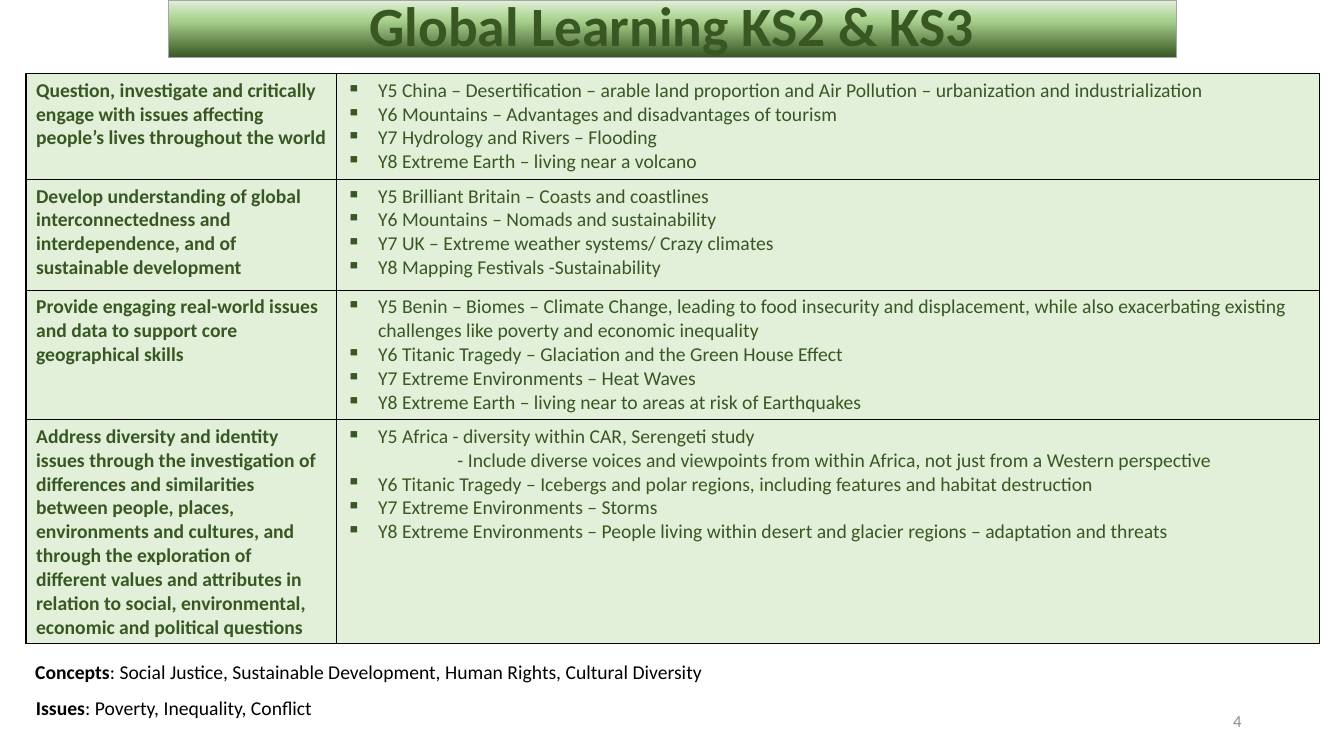
import copy

import lxml.etree
import pptx
import pptx.dml.color
import pptx.enum.shapes
import pptx.enum.text
import pptx.oxml.ns
import pptx.util

COLUMNS, ROWS = 160, 90
SLIDE_WIDTH = pptx.util.Inches(13.33)
SLIDE_HEIGHT = pptx.util.Inches(7.5)

RGBColor = pptx.dml.color.RGBColor
DARK_GREEN = RGBColor(0x38, 0x57, 0x23)
MID_GREEN = RGBColor(0xA9, 0xD1, 0x8E)
PALE_GREEN = RGBColor(0xE2, 0xF0, 0xD9)
BANNER_EDGE = RGBColor(0xA5, 0xA5, 0xA5)
NUMBER_GREY = RGBColor(0x8C, 0x8C, 0x8C)
BLACK = RGBColor(0, 0, 0)

ALIGN = pptx.enum.text.PP_ALIGN
MIDDLE = pptx.enum.text.MSO_ANCHOR.MIDDLE
BULLET_INDENT = 3.75
NOTE_INDENT = 13.2

AIMS = [
    ("Question, investigate and critically engage with issues affecting people’s lives throughout the world", 12.6, [
        "Y5 China – Desertification – arable land proportion and Air Pollution – urbanization and industrialization",
        "Y6 Mountains – Advantages and disadvantages of tourism",
        "Y7 Hydrology and Rivers – Flooding",
        "Y8 Extreme Earth – living near a volcano",
    ]),
    ("Develop understanding of global interconnectedness and interdependence, and of sustainable development", 13.2, [
        "Y5 Brilliant Britain – Coasts and coastlines",
        "Y6 Mountains – Nomads and sustainability",
        "Y7 UK – Extreme weather systems/ Crazy climates",
        "Y8 Mapping Festivals -Sustainability",
    ]),
    ("Provide engaging real-world issues and data to support core geographical skills", 15.4, [
        "Y5 Benin – Biomes – Climate Change, leading to food insecurity and displacement, while also "
        "exacerbating existing challenges like poverty and economic inequality",
        "Y6 Titanic Tragedy – Glaciation and the Green House Effect",
        "Y7 Extreme Environments – Heat Waves",
        "Y8 Extreme Earth – living near to areas at risk of Earthquakes",
    ]),
    ("Address diversity and identity issues through the investigation of differences and similarities "
     "between people, places, environments and cultures, and through the exploration of different values "
     "and attributes in relation to social, environmental, economic and political questions", 26.7, [
        "Y5 Africa - diversity within CAR, Serengeti study",
        "- Include diverse voices and viewpoints from within Africa, not just from a Western perspective",
        "Y6 Titanic Tragedy – Icebergs and polar regions, including features and habitat destruction",
        "Y7 Extreme Environments – Storms",
        "Y8 Extreme Environments – People living within desert and glacier regions – adaptation and threats",
    ]),
]


def across(columns):
    return round(SLIDE_WIDTH * columns / COLUMNS)


def down(rows):
    return round(SLIDE_HEIGHT * rows / ROWS)


def place(box):
    left, top, width, height = box
    return across(left), down(top), across(width), down(height)


def add_span(para, text, size, colour, bold=False):
    span = para.add_run()
    span.text = text
    span.font.name = "Calibri"
    span.font.size = pptx.util.Pt(size)
    span.font.bold = bold
    span.font.color.rgb = colour


def indent(para, margin, bullet):
    properties = para._p.get_or_add_pPr()
    properties.set("marL", str(across(margin)))
    if bullet:
        properties.set("indent", str(-across(margin)))
        mark = lxml.etree.SubElement(properties, pptx.oxml.ns.qn("a:buChar"))
        mark.set("char", "▪")


def style_cell(cell):
    cell.fill.solid()
    cell.fill.fore_color.rgb = PALE_GREEN
    properties = cell._tc.get_or_add_tcPr()
    for position, side in enumerate(("a:lnL", "a:lnR", "a:lnT", "a:lnB")):
        edge = lxml.etree.Element(pptx.oxml.ns.qn(side), w=str(pptx.util.Pt(1)))
        paint = lxml.etree.SubElement(edge, pptx.oxml.ns.qn("a:solidFill"))
        lxml.etree.SubElement(paint, pptx.oxml.ns.qn("a:srgbClr"), val=str(BLACK))
        properties.insert(position, edge)


def add_banner(page, box, title):
    banner = page.shapes.add_shape(pptx.enum.shapes.MSO_SHAPE.RECTANGLE, *place(box))
    banner.shadow.inherit = False
    banner.line.color.rgb = BANNER_EDGE
    banner.line.width = pptx.util.Pt(0.5)
    banner.fill.gradient()
    banner.fill.gradient_angle = 270
    stop_list = banner._element.spPr.find(".//" + pptx.oxml.ns.qn("a:gsLst"))
    stop_list.append(copy.deepcopy(stop_list[0]))
    shades = ((0, PALE_GREEN), (0.35, MID_GREEN), (1, DARK_GREEN))
    for stop, (position, colour) in zip(banner.fill.gradient_stops, shades):
        stop.position = position
        stop.color.rgb = colour
    banner.text_frame.vertical_anchor = MIDDLE
    para = banner.text_frame.paragraphs[0]
    para.alignment = ALIGN.CENTER
    para.line_spacing = 0.9
    add_span(para, title, 39.6, DARK_GREEN, True)


def add_aims_table(page, box, aims):
    table = page.shapes.add_table(len(aims), 2, *place(box)).table
    aim_share = 0.24
    table.columns[0].width = across(box[2] * aim_share)
    table.columns[1].width = across(box[2] * (1 - aim_share))
    for index, (aim, height, topics) in enumerate(aims):
        table.rows[index].height = down(height)
        aim_cell, topic_cell = table.cell(index, 0), table.cell(index, 1)
        style_cell(aim_cell)
        style_cell(topic_cell)
        add_span(aim_cell.text_frame.paragraphs[0], aim, 14, DARK_GREEN, True)
        frame = topic_cell.text_frame
        for number, topic in enumerate(topics):
            para = frame.add_paragraph() if number else frame.paragraphs[0]
            is_note = topic.startswith("-")
            indent(para, NOTE_INDENT if is_note else BULLET_INDENT, not is_note)
            add_span(para, topic, 14, DARK_GREEN)


def add_text(page, box, spans, size, colour, alignment=ALIGN.LEFT):
    frame = page.shapes.add_textbox(*place(box)).text_frame
    frame.word_wrap = True
    frame.vertical_anchor = MIDDLE
    para = frame.paragraphs[0]
    para.alignment = alignment
    for text, bold in spans:
        add_span(para, text, size, colour, bold)


def build_global_learning(page):
    add_banner(page, (20, 0, 120, 6.84), "Global Learning KS2 & KS3")
    add_text(page, (113, 83.4, 36, 4.8), [("4", False)], 12, NUMBER_GREY, ALIGN.RIGHT)
    table_height = sum(height for _, height, _ in AIMS)
    add_aims_table(page, (3.1, 8.76, 154, table_height), AIMS)
    add_text(page, (3.1, 82.2, 64.8, 4.04),
             [("Issues", True), (": Poverty, Inequality, Conflict", False)], 14, BLACK)
    add_text(page, (3, 77.9, 154, 4.04),
             [("Concepts", True),
              (": Social Justice, Sustainable Development, Human Rights, Cultural Diversity", False)],
             14, BLACK)


def main():
    deck = pptx.Presentation()
    deck.slide_width = SLIDE_WIDTH
    deck.slide_height = SLIDE_HEIGHT
    build_global_learning(deck.slides.add_slide(deck.slide_layouts[6]))
    deck.save("out.pptx")


if __name__ == "__main__":
    main()
